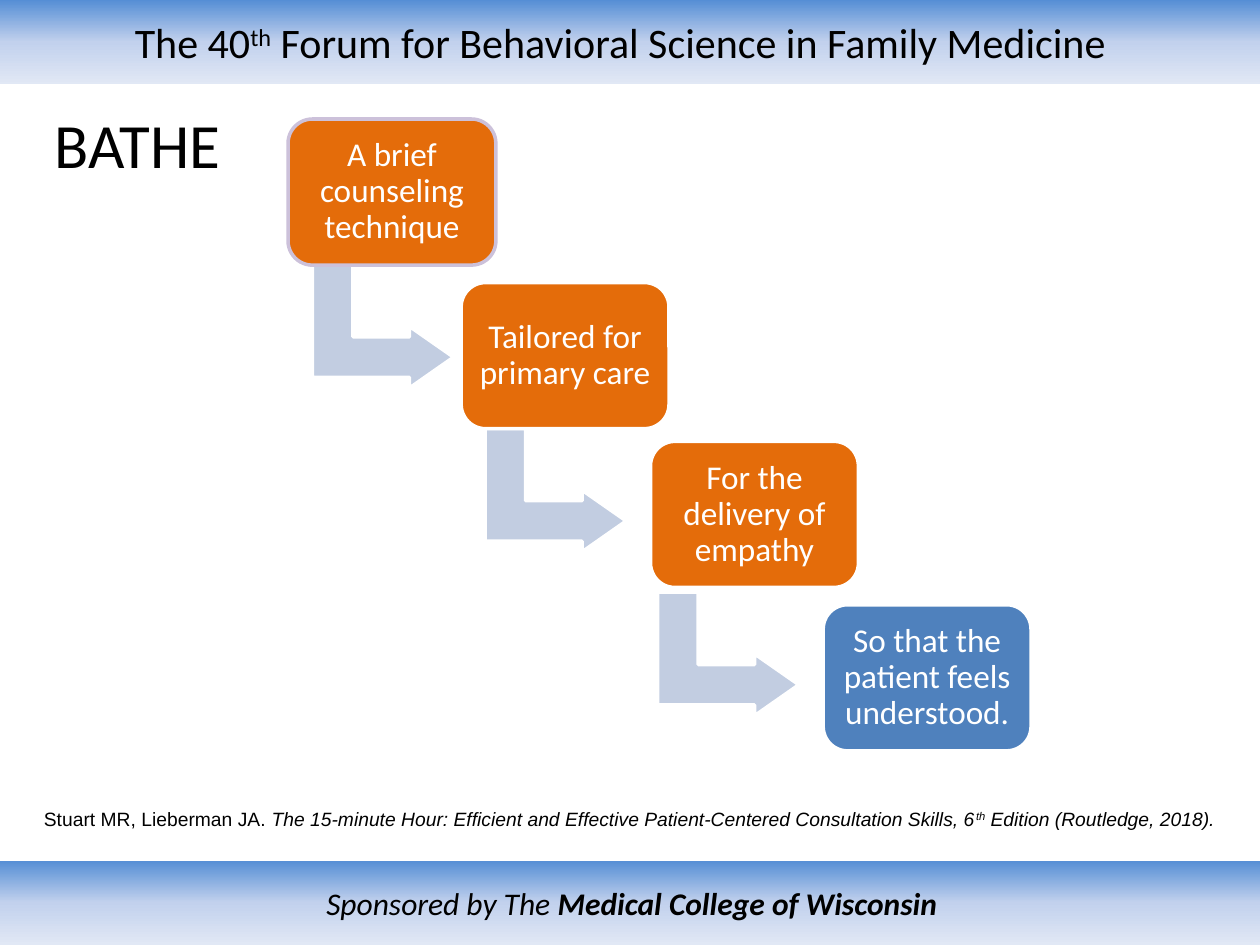
from copy import deepcopy
from pptx import Presentation
from pptx.dml.color import RGBColor
from pptx.enum.shapes import MSO_SHAPE
from pptx.enum.text import MSO_ANCHOR, PP_ALIGN
from pptx.util import Inches, Pt

deck = Presentation()
deck.slide_width, deck.slide_height = Inches(10), Inches(7.5)
slide = deck.slides.add_slide(deck.slide_layouts[6])
column, row = deck.slide_width / 100, deck.slide_height / 75


def color(value):
    return RGBColor.from_string(value)


def write(holder, runs, frame_format, paragraph_format, font_format, ink="000000"):
    frame = holder.text_frame
    paragraph = frame.paragraphs[0]
    for target, values in ((frame, frame_format), (paragraph, paragraph_format)):
        for name, value in values.items():
            setattr(target, name, value)
    for words, changes in runs:
        run = paragraph.add_run()
        run.text = words
        run.font.color.rgb = color(ink)
        for name, value in {**font_format, **changes}.items():
            if name == "baseline":
                run._r.get_or_add_rPr().set(name, value)
            else:
                setattr(run.font, name, value)


raised = {"baseline": "30000"}
middle = {"word_wrap": True, "vertical_anchor": MSO_ANCHOR.MIDDLE}
centered = {"alignment": PP_ALIGN.CENTER}
banner_stops = [(0, "558ED5"), (0.5, "C2D1ED"), (1, "E1E8F5")]
banners = [
    (0, 100, 2.5, {"size": Pt(24)},
     [("The 40", {}), ("th", raised),
      (" Forum for Behavioral Science in Family Medicine", {})]),
    (68.3, 100.3, 1, {"size": Pt(18), "italic": True},
     [("Sponsored by The ", {}), ("Medical College of Wisconsin", {"bold": True})]),
]
for top, width, right_inset, lettering, runs in banners:
    banner = slide.shapes.add_shape(
        MSO_SHAPE.RECTANGLE, 0, int(top * row), int(width * column), int(6.7 * row))
    banner.shadow.inherit = False
    banner.line.fill.background()
    banner.fill.gradient()
    banner.fill.gradient_angle = 270
    last_stop = banner.fill.gradient_stops[1]._gs
    last_stop.addprevious(deepcopy(last_stop))
    for stop, (position, shade) in zip(banner.fill.gradient_stops, banner_stops):
        stop.position = position
        stop.color.rgb = color(shade)
    write(banner, runs, {**middle, "margin_right": int(right_inset * column)},
          centered, {"name": "Calibri", **lettering})

heading = slide.shapes.add_textbox(
    int(3.35 * column), int(3.3 * row), int(17.3 * column), int(16.1 * row))
write(heading, [("BATHE", {})], middle, {}, {"name": "Calibri", "size": Pt(36)})

citation = slide.shapes.add_textbox(
    int(2.5 * column), int(63.8 * row), int(95.8 * column), int(2.7 * row))
write(citation,
      [("Stuart MR, Lieberman JA. ", {}),
       ("The 15-minute Hour: Efficient and Effective Patient-Centered "
        "Consultation Skills, 6", {"italic": True}),
       ("th", {"italic": True, **raised}),
       (" Edition (Routledge, 2018).", {"italic": True})],
      {"word_wrap": True}, {"line_spacing": 0.9}, {"name": "Arial", "size": Pt(11)})

step_insets = {f"margin_{side}": int(0.75 * column)
               for side in ("left", "right", "top", "bottom")}
steps = [
    (22.86, 9.45, "E46C0A", "CCC1DA", "A brief counseling technique"),
    (36.6, 22.43, "E46C0A", "FFFFFF", "Tailored for primary care"),
    (51.63, 35.03, "E46C0A", "FFFFFF", "For the delivery of empathy"),
    (65.33, 48, "4F81BD", "FFFFFF", "So that the patient feels understood."),
]
for index, (left, top, shade, edge, words) in enumerate(steps):
    parts = []
    if index < len(steps) - 1:
        arrow = slide.shapes.add_shape(
            MSO_SHAPE.BENT_UP_ARROW, int((25.5 + 13.7 * index) * column),
            int((20.3 + 13 * index) * row), int(9.8 * column), int(11.2 * row))
        arrow.rotation = 90
        for position, share in enumerate((0.328, 0.25, 0.358)):
            arrow.adjustments[position] = share
        parts.append((arrow, "C2CDE1", "FFFFFF"))
    step = slide.shapes.add_shape(
        MSO_SHAPE.ROUNDED_RECTANGLE, int(left * column), int(top * row),
        int(16.5 * column), int(11.6 * row))
    parts.append((step, shade, edge))
    for part, inside, outline in parts:
        part.shadow.inherit = False
        part.fill.solid()
        part.fill.fore_color.rgb = color(inside)
        part.line.color.rgb = color(outline)
        part.line.width = Pt(2)
    write(step, [(words, {})], {**middle, **step_insets},
          {**centered, "line_spacing": 0.9},
          {"name": "Calibri", "size": Pt(19)}, "FFFFFF")

deck.save("out.pptx")
